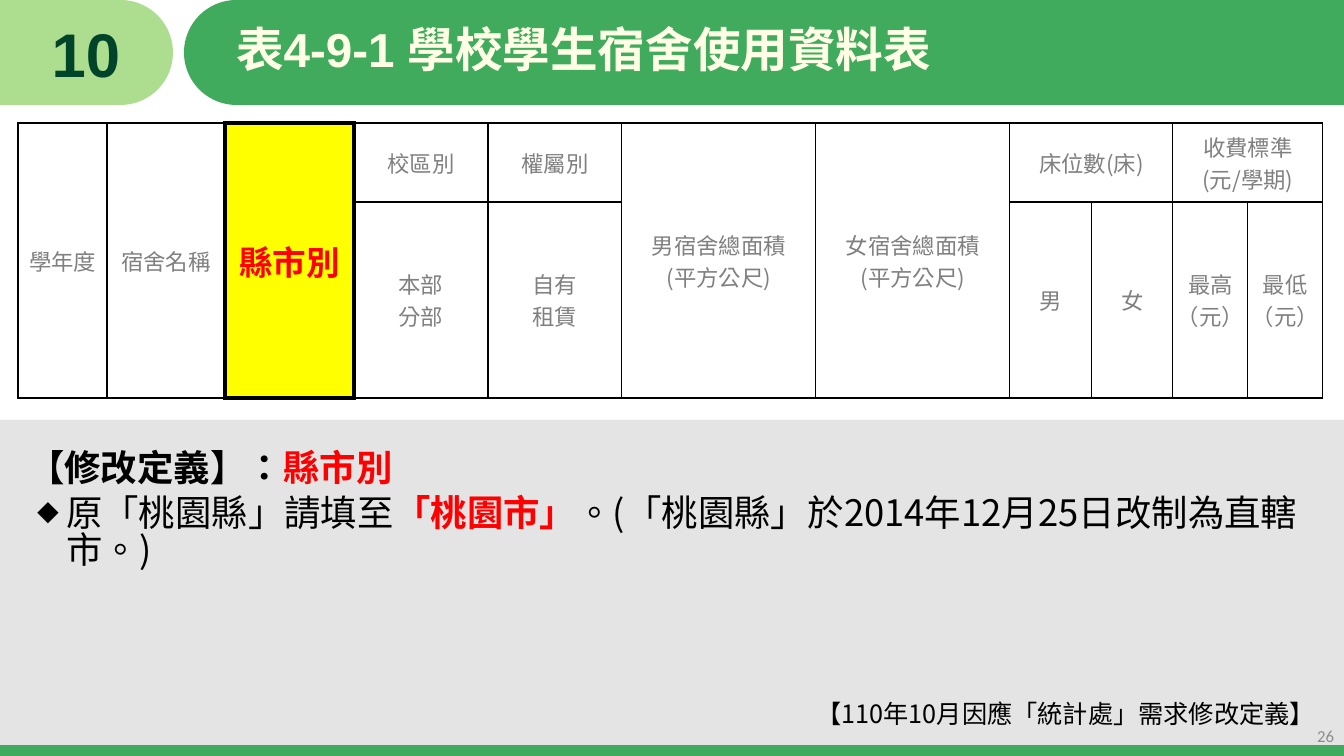
import lxml.etree
import pptx
import pptx.dml.color
import pptx.enum.shapes
import pptx.enum.text
import pptx.oxml.ns
import pptx.util

PX = 914400 / 100.8
CJK = "Noto Sans CJK SC"
COLORS = {
    "green": "41AB5D", "light green": "ADDD8E", "dark green": "004529",
    "cream": "FFFFE5", "panel": "BFBFBF", "black": "000000", "red": "FF0000",
    "yellow": "FFFF00", "gray": "808080", "page number": "8C8C8C",
}
RGB = {name: pptx.dml.color.RGBColor.from_string(value) for name, value in COLORS.items()}
ALIGN = pptx.enum.text.PP_ALIGN
MIDDLE = pptx.enum.text.MSO_ANCHOR.MIDDLE
SHAPE = pptx.enum.shapes.MSO_SHAPE
qn = pptx.oxml.ns.qn


def px(*lengths):
    return [pptx.util.Emu(round(length * PX)) for length in lengths]


def write(paragraph, text, size=16, color="gray", bold=False, font=CJK, align=ALIGN.LEFT):
    """Append a Traditional Chinese run with its Latin and East Asian fonts set."""
    paragraph.alignment = align
    run = paragraph.add_run()
    run.text = text
    run.font.size = pptx.util.Pt(size)
    run.font.bold = bold
    run.font.name = font
    run.font.color.rgb = RGB[color]
    run.font._element.set("lang", "zh-TW")
    east_asian = lxml.etree.Element(qn("a:ea"), typeface=CJK)
    run.font._element.find(qn("a:latin")).addnext(east_asian)


presentation = pptx.Presentation()
presentation.slide_width, presentation.slide_height = px(1344, 756)
slide = presentation.slides.add_slide(presentation.slide_layouts[3])
title, body, number = slide.placeholders

# Background bands, placed behind the placeholders
bands = [
    (SHAPE.RECTANGLE, (0, 420, 1344, 336), "panel"),
    (SHAPE.RECTANGLE, (0, 745, 1344, 11), "green"),
    (SHAPE.RECTANGLE, (0, 0, 120, 105), "light green"),
    (SHAPE.OVAL, (68, 0, 105, 105), "light green"),
    (SHAPE.OVAL, (184, 0, 105, 105), "green"),
    (SHAPE.RECTANGLE, (237, 0, 1107, 105), "green"),
]
for position, (kind, box, color) in enumerate(bands, start=2):
    band = slide.shapes.add_shape(kind, *px(*box))
    band.shadow.inherit = False
    band.line.fill.background()
    band.fill.solid()
    band.fill.fore_color.rgb = RGB[color]
    if color == "panel":
        fill_color = band._element.spPr.find(".//" + qn("a:srgbClr"))
        lxml.etree.SubElement(fill_color, qn("a:alpha"), val="41000")
    slide.shapes.element.insert(position, band._element)

# Title, section number and body text
for placeholder, box in [
    (title, (226, 0, 1099, 105)),
    (number, (0, 0, 172, 105)),
    (body, (18, 423, 1307, 333)),
]:
    placeholder.left, placeholder.top, placeholder.width, placeholder.height = px(*box)
    placeholder.text_frame.auto_size = pptx.enum.text.MSO_AUTO_SIZE.NONE
    placeholder.text_frame.word_wrap = True
title.text_frame.vertical_anchor = number.text_frame.vertical_anchor = MIDDLE
title_paragraph = title.text_frame.paragraphs[0]
title_paragraph.line_spacing = 0.9
write(title_paragraph, "表4-9-1 學校學生宿舍使用資料表", size=34, color="cream", bold=True, font="Arial")

number_paragraph = number.text_frame.paragraphs[0]
number_paragraph.space_before = pptx.util.Pt(10)
write(number_paragraph, "10", size=44, color="dark green", bold=True, font="Arial", align=ALIGN.CENTER)

heading = body.text_frame.paragraphs[0]
definition = body.text_frame.add_paragraph()
footnote = body.text_frame.add_paragraph()
for paragraph, line_spacing, space_before in [(heading, 1.4, 5), (definition, 0.86, 5), (footnote, 0.86, 94)]:
    paragraph.line_spacing = line_spacing
    paragraph.space_before = pptx.util.Pt(space_before)
write(heading, "【修改定義】：", size=26, color="black", bold=True)
write(heading, "縣市別", size=26, color="red", bold=True)
write(definition, "原「桃園縣」請填至", size=26, color="black")
write(definition, "「桃園市」", size=26, color="red", bold=True)
write(definition, "。(「桃園縣」於2014年12月25日改制為直轄市。)", size=26, color="black")
write(footnote, "【110年10月因應「統計處」需求修改定義】", size=18, color="black", align=ALIGN.RIGHT)

for paragraph, margin, hanging, bullet in [
    (number_paragraph, 0, 0, None), (heading, 0, 0, None), (definition, 38, 29, "◆"), (footnote, 0, 0, None),
]:
    properties = paragraph._p.get_or_add_pPr()
    properties.set("marL", str(px(margin)[0]))
    properties.set("indent", str(-px(hanging)[0]))
    if bullet:
        bullet_color = lxml.etree.SubElement(properties, qn("a:buClr"))
        lxml.etree.SubElement(bullet_color, qn("a:srgbClr"), val=COLORS["black"])
        lxml.etree.SubElement(properties, qn("a:buSzPct"), val="60000")
        lxml.etree.SubElement(properties, qn("a:buFont"), typeface=CJK)
        lxml.etree.SubElement(properties, qn("a:buChar"), char=bullet)
    else:
        lxml.etree.SubElement(properties, qn("a:buNone"))

# Dormitory table
column_widths = [89, 118, 129, 134, 134, 194, 194, 82, 81, 75, 75]
row_heights = [79, 196]
highlighted = 2
labels = [
    ["學年度", "宿舍名稱", "縣市別", "校區別", "權屬別", "男宿舍總面積\n(平方公尺)",
     "女宿舍總面積\n(平方公尺)", "床位數(床)", "", "收費標準\n(元/學期)", ""],
    ["", "", "", "本部\n分部", "自有\n租賃", "", "", "男", "女", "最高（元）", "最低（元）"],
]
frame = slide.shapes.add_table(
    len(row_heights), len(column_widths), *px(18, 123, sum(column_widths), sum(row_heights)))
table = frame.table
table.first_row = table.horz_banding = False
for column, width in zip(table.columns, column_widths):
    column.width = px(width)[0]
for row, height in zip(table.rows, row_heights):
    row.height = px(height)[0]

for row_index, row_labels in enumerate(labels):
    for column_index, label in enumerate(row_labels):
        cell = table.cell(row_index, column_index)
        is_highlighted = column_index == highlighted
        cell.vertical_anchor = MIDDLE
        cell.margin_left = cell.margin_right = px(2)[0]
        cell.margin_top = cell.margin_bottom = 0
        if is_highlighted:
            cell.fill.solid()
            cell.fill.fore_color.rgb = RGB["yellow"]
        else:
            cell.fill.background()
        style = {"size": 24, "color": "red", "bold": True} if is_highlighted else {}
        for line_index, line in enumerate(label.split("\n") if label else []):
            text_frame = cell.text_frame
            paragraph = text_frame.add_paragraph() if line_index else text_frame.paragraphs[0]
            write(paragraph, line, align=ALIGN.CENTER, **style)
        for position, side in enumerate("LRTB"):
            thick = (is_highlighted or (side == "R" and column_index == highlighted - 1)
                     or (side == "L" and column_index == highlighted + 1))
            border = lxml.etree.Element(qn("a:ln" + side), w=str(pptx.util.Pt(3 if thick else 1)))
            border_fill = lxml.etree.SubElement(border, qn("a:solidFill"))
            lxml.etree.SubElement(border_fill, qn("a:srgbClr"), val=COLORS["black"])
            cell._tc.get_or_add_tcPr().insert(position, border)

for column_index in (0, 1, 2, 5, 6):
    table.cell(0, column_index).merge(table.cell(1, column_index))
for column_index in (7, 9):
    table.cell(0, column_index).merge(table.cell(0, column_index + 1))

# Page number
page_number = slide.shapes.add_textbox(*px(1041, 716, 303, 40))
page_number.text_frame.word_wrap = True
page_number.text_frame.vertical_anchor = MIDDLE
write(page_number.text_frame.paragraphs[0], "26", size=12, color="page number", font="Calibri", align=ALIGN.RIGHT)

presentation.save("out.pptx")
